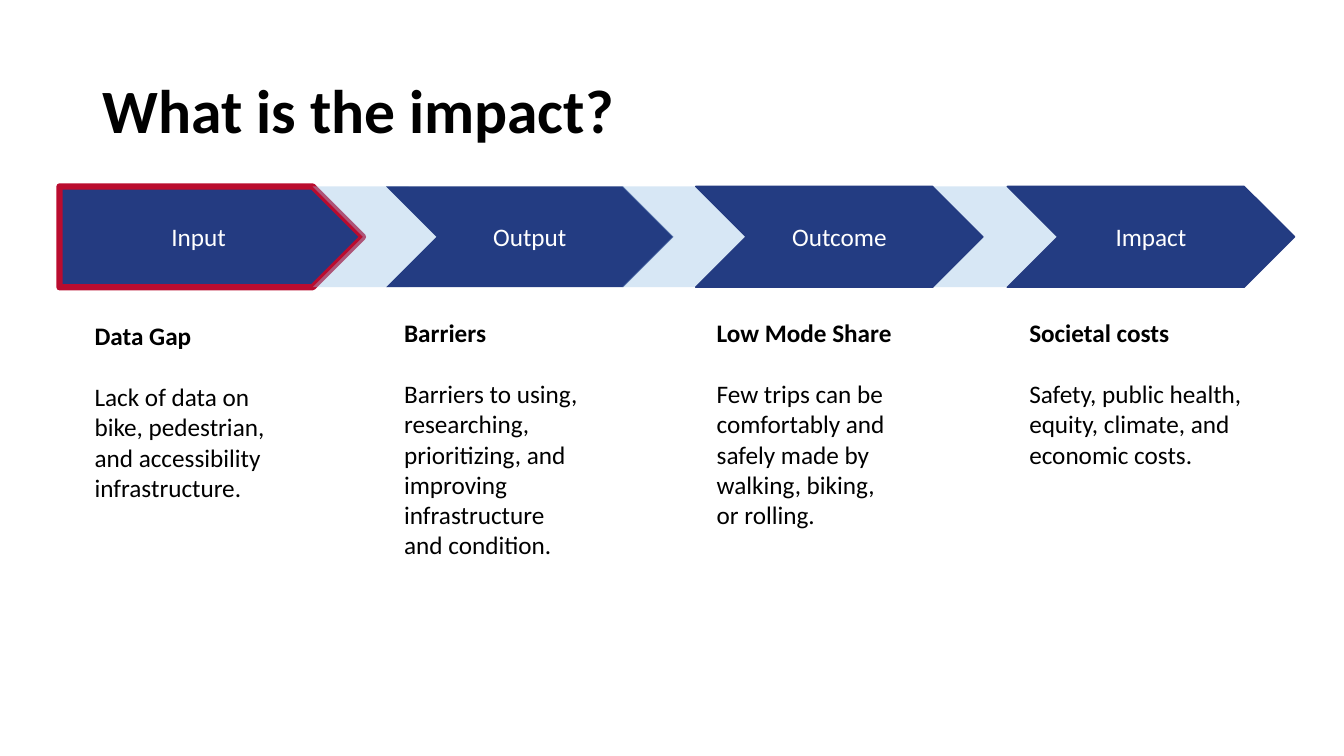
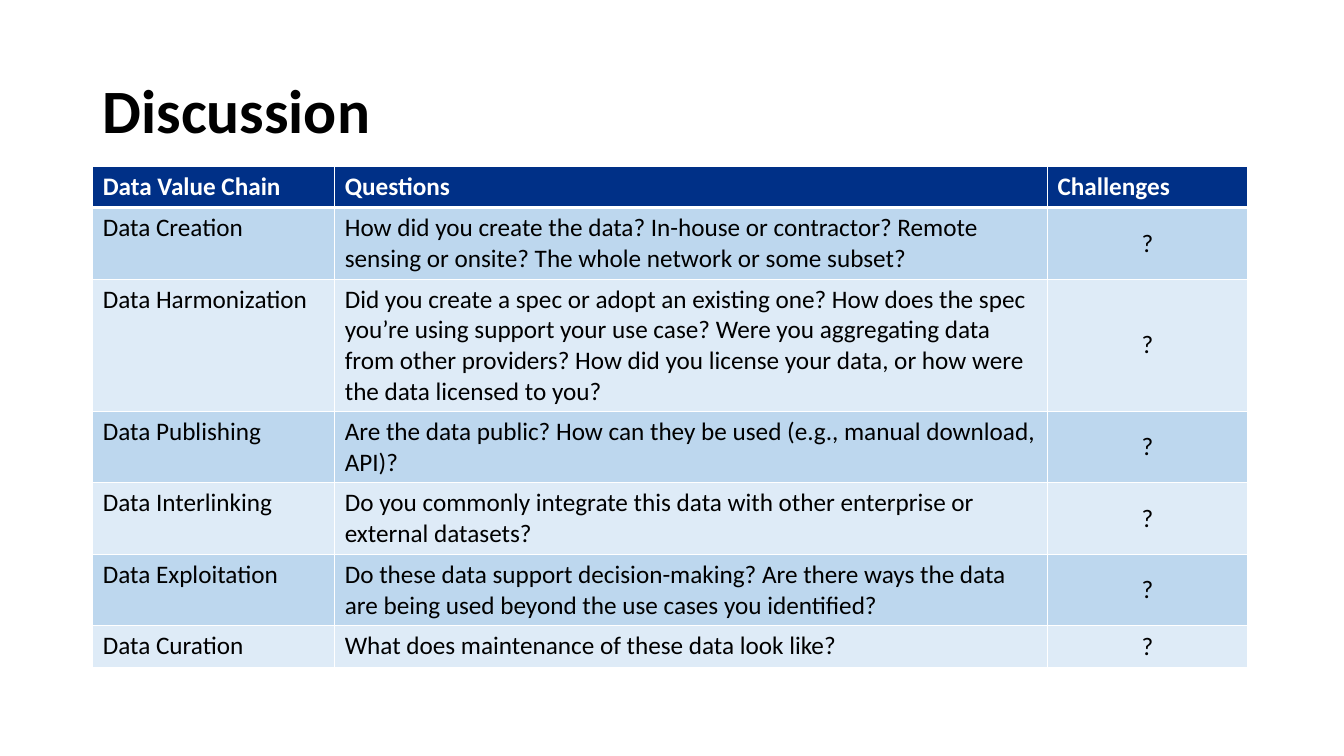
from dataclasses import dataclass
from typing import Optional

from lxml import etree
from pptx import Presentation
from pptx.dml.color import RGBColor
from pptx.enum.shapes import MSO_SHAPE
from pptx.enum.text import MSO_ANCHOR, MSO_AUTO_SIZE, PP_ALIGN
from pptx.oxml.ns import qn
from pptx.util import Emu, Pt

PENTAGON, CHEVRON = MSO_SHAPE.PENTAGON, MSO_SHAPE.CHEVRON
MIDDLE, TOP = MSO_ANCHOR.MIDDLE, MSO_ANCHOR.TOP
CENTER, LEFT = PP_ALIGN.CENTER, PP_ALIGN.LEFT
FIT_SHAPE = MSO_AUTO_SIZE.SHAPE_TO_FIT_TEXT

BLACK = RGBColor(0x00, 0x00, 0x00)
WHITE = RGBColor(0xFF, 0xFF, 0xFF)
NAVY = RGBColor(0x24, 0x3B, 0x81)
ARROW_BLUE = RGBColor(0x23, 0x3C, 0x82)
LINK_BLUE = RGBColor(0x9D, 0xC3, 0xE6)
RED = RGBColor(0xBA, 0x0C, 0x2F)
HEADER_BLUE = RGBColor(0x00, 0x30, 0x87)
BANDS = (RGBColor(0xBD, 0xD7, 0xEE), RGBColor(0xDE, 0xEB, 0xF7))

FONT = "Calibri"
TITLE_SIZE, BODY_SIZE = 44, 18
PX = 9144  # EMU; 100 px to the inch

ARROW_TOP, ARROW_HEIGHT = 185, 100
LINK_WIDTH, LINK_LEAD = 145, 73
TABLE_LEFT, TABLE_TOP = 92, 165
COLUMN_WIDTHS = (240, 707, 198)
CELL_PADDING, LINE_HEIGHT = 11, 30


@dataclass(frozen=True)
class Box:
    left: int
    top: int
    width: int
    height: int

    def emu(self) -> tuple[Emu, ...]:
        return tuple(Emu(n * PX) for n in (self.left, self.top, self.width, self.height))


@dataclass(frozen=True)
class Stage:
    label: str
    left: int
    width: int
    heading: str
    body: str
    text_box: Box
    fill: RGBColor = ARROW_BLUE
    line: Optional[RGBColor] = None
    line_width: float = 1
    first: bool = False


@dataclass(frozen=True)
class Topic:
    name: str
    questions: str
    lines: int


STAGES = (
    Stage("Input", 59, 301, "Data Gap",
          "Lack of data on bike, pedestrian, and accessibility infrastructure.",
          Box(84, 313, 226, 192), fill=NAVY, line=RED, line_width=4.5, first=True),
    Stage("Output", 383, 285, "Barriers",
          "Barriers to using, researching, prioritizing, and improving "
          "infrastructure and condition.",
          Box(391, 310, 198, 252)),
    Stage("Outcome", 690, 285, "Low Mode Share",
          "Few trips can be comfortably and safely made by walking, biking, or rolling.",
          Box(701, 310, 198, 222), line=NAVY),
    Stage("Impact", 999, 285, "Societal costs",
          "Safety, public health, equity, climate, and economic costs.",
          Box(1011, 310, 242, 162), line=NAVY),
)

HEADERS = ("Data Value Chain", "Questions", "Challenges")
TOPICS = (
    Topic("Data Creation",
          "How did you create the data? In-house or contractor? Remote sensing or "
          "onsite? The whole network or some subset?", 2),
    Topic("Data Harmonization",
          "Did you create a spec or adopt an existing one? How does the spec you’re "
          "using support your use case? Were you aggregating data from other providers? "
          "How did you license your data, or how were the data licensed to you?", 4),
    Topic("Data Publishing",
          "Are the data public? How can they be used (e.g., manual download, API)?", 2),
    Topic("Data Interlinking",
          "Do you commonly integrate this data with other enterprise or external "
          "datasets?", 2),
    Topic("Data Exploitation",
          "Do these data support decision-making? Are there ways the data are being "
          "used beyond the use cases you identified?", 2),
    Topic("Data Curation", "What does maintenance of these data look like?", 1),
)


def write(p, text: str, color: RGBColor = BLACK, size: int = BODY_SIZE,
          bold: bool = False, align: PP_ALIGN = LEFT) -> None:
    p.text = text
    p.alignment = align
    p.font.name = FONT
    p.font.size = Pt(size)
    p.font.bold = bold
    p.font.color.rgb = color


def add_text_box(shapes, box: Box):
    tf = shapes.add_textbox(*box.emu()).text_frame
    tf.word_wrap = True
    return tf


def add_titled_slide(prs, title: str):
    s = prs.slides.add_slide(prs.slide_layouts[6])
    tf = add_text_box(s.shapes, Box(92, 40, 1150, 145))
    tf.vertical_anchor = MIDDLE
    p = tf.paragraphs[0]
    write(p, title, size=TITLE_SIZE, bold=True)
    p.line_spacing = 0.9
    return s


def add_arrow(shapes, kind: MSO_SHAPE, left: int, width: int, fill: RGBColor):
    sp = shapes.add_shape(kind, *Box(left, ARROW_TOP, width, ARROW_HEIGHT).emu())
    sp.shadow.inherit = False
    sp.fill.solid()
    sp.fill.fore_color.rgb = fill
    sp.line.fill.background()
    return sp


def set_opacity(sp, percent: int) -> None:
    color = sp.element.spPr.find(f"{qn('a:solidFill')}/{qn('a:srgbClr')}")
    etree.SubElement(color, qn("a:alpha"), val=str(percent * 1000))


def add_stage(s, stage: Stage) -> None:
    shapes = s.shapes.add_group_shape().shapes
    if not stage.first:
        link = add_arrow(shapes, CHEVRON, stage.left - LINK_LEAD, LINK_WIDTH, LINK_BLUE)
        set_opacity(link, 40)
    kind = PENTAGON if stage.first else CHEVRON
    arrow = add_arrow(shapes, kind, stage.left, stage.width, stage.fill)
    if stage.line is not None:
        arrow.line.color.rgb = stage.line
        arrow.line.width = Pt(stage.line_width)
    arrow.text_frame.vertical_anchor = MIDDLE
    write(arrow.text_frame.paragraphs[0], stage.label, WHITE, align=CENTER)

    tf = add_text_box(shapes, stage.text_box)
    tf.auto_size = FIT_SHAPE
    heading = tf.paragraphs[0]
    write(heading, stage.heading, bold=True)
    heading.space_after = Pt(22)
    write(tf.add_paragraph(), stage.body)


def set_borders(cell, top: int, bottom: int) -> None:
    """Draw white cell borders, 1 pt at the sides; call before filling the cell."""
    tc_pr = cell._tc.get_or_add_tcPr()
    for side, points in (("L", 1), ("R", 1), ("T", top), ("B", bottom)):
        ln = etree.SubElement(tc_pr, qn(f"a:ln{side}"), w=str(Pt(points)))
        fill = etree.SubElement(ln, qn("a:solidFill"))
        etree.SubElement(fill, qn("a:srgbClr"), val=str(WHITE))


def add_topic_table(s) -> None:
    rows = [HEADERS] + [(t.name, t.questions, "?") for t in TOPICS]
    heights = [CELL_PADDING + LINE_HEIGHT * n for n in (1, *(t.lines for t in TOPICS))]
    box = Box(TABLE_LEFT, TABLE_TOP, sum(COLUMN_WIDTHS), sum(heights))
    table = s.shapes.add_table(len(rows), len(HEADERS), *box.emu()).table
    for column, width in zip(table.columns, COLUMN_WIDTHS):
        column.width = Emu(width * PX)
    for i, (texts, height) in enumerate(zip(rows, heights)):
        table.rows[i].height = Emu(height * PX)
        header = i == 0
        for j, text in enumerate(texts):
            cell = table.cell(i, j)
            set_borders(cell, top=3 if i == 1 else 1, bottom=3 if header else 1)
            cell.fill.solid()
            cell.fill.fore_color.rgb = HEADER_BLUE if header else BANDS[(i - 1) % 2]
            centered = not header and j == len(HEADERS) - 1
            cell.vertical_anchor = MIDDLE if centered else TOP
            write(cell.text_frame.paragraphs[0], text, WHITE if header else BLACK,
                  bold=header, align=CENTER if centered else LEFT)


def main() -> None:
    prs = Presentation()
    prs.slide_width, prs.slide_height = Emu(1333 * PX), Emu(750 * PX)

    impact = add_titled_slide(prs, "What is the impact?")
    for stage in STAGES:
        add_stage(impact, stage)

    discussion = add_titled_slide(prs, "Discussion")
    add_topic_table(discussion)

    prs.save("out.pptx")


if __name__ == "__main__":
    main()
